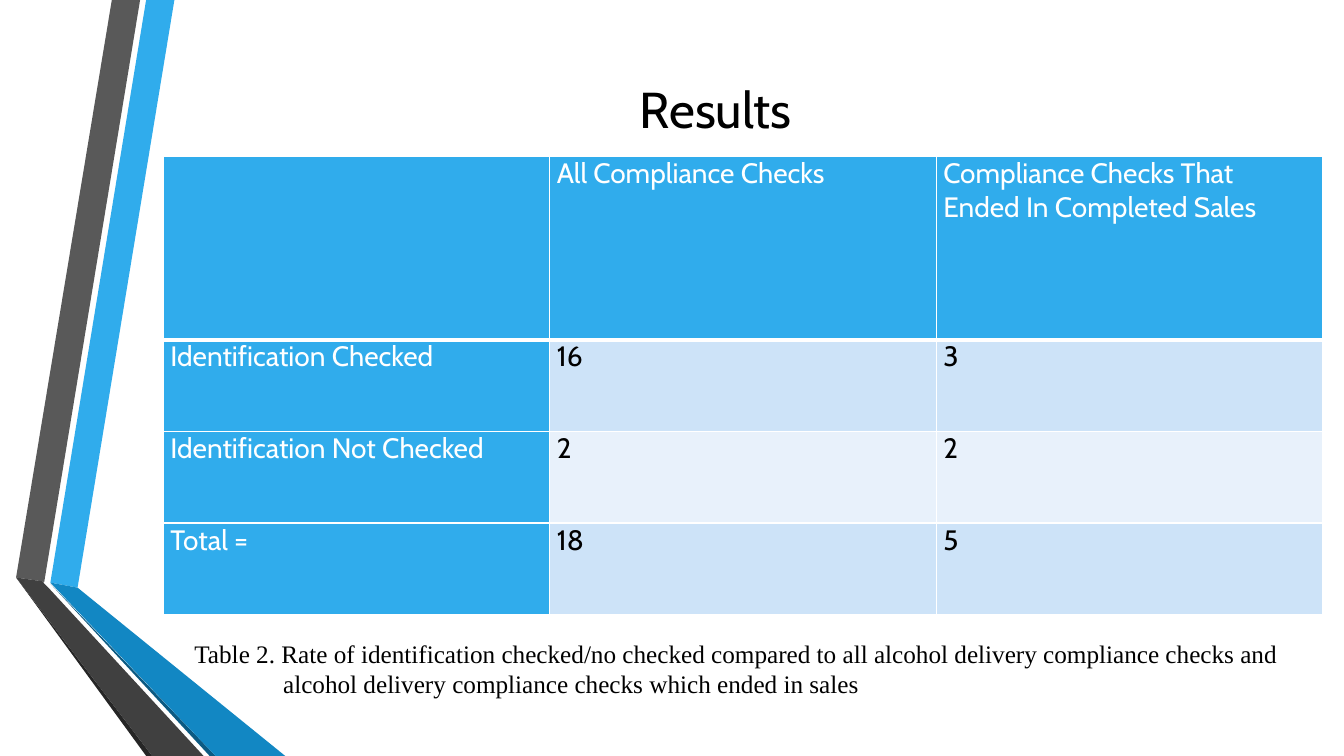
from lxml import etree
from pptx import Presentation, util as u
from pptx.dml.color import RGBColor
from pptx.enum import text
from pptx.oxml import ns

PX = 9144  # one hundredth of an inch
BLUE, WHITE, BLACK = "30ACEC", "FFFFFF", "000000"
BANDS = ["CDE3F8", "E8F1FB"]

RIBBONS = [  # colour, outline relative to the ribbon box
    (BLUE, [(34, 578), (61, 583), (157, 0), (129, 0)]),
    ("595959", [(123, 0), (95, 0), (0, 573), (28, 577)]),
    ("262626", [(0, 573), (129, 750), (135, 750)]),
    ("0C5A82", [(34, 579), (192, 750), (198, 750)]),
    ("1287C3", [(34, 578), (198, 750), (267, 750), (61, 583)]),
    ("404040", [(186, 750), (32, 583), (27, 578), (28, 577), (0, 573), (135, 750)]),
]
ROWS = [
    ["", "All Compliance Checks", "Compliance Checks That Ended In Completed Sales"],
    ["Identification Checked", "16", "3"],
    ["Identification Not Checked", "2", "2"],
    ["Total =", "18", "5"],
]
CAPTION = [
    "Table 2. Rate of identification checked/no checked compared to all alcohol delivery compliance checks and",
    "alcohol delivery compliance checks which ended in sales",
]


def px(*lengths):
    return [u.Emu(length * PX) for length in lengths]


def paint(fill, colour):
    fill.solid()
    fill.fore_color.rgb = RGBColor.from_string(colour)


def write(para, words, size=20, font="Cabin", colour=BLACK, align=text.PP_ALIGN.LEFT, indent=0):
    para.alignment = align
    if indent:
        properties = para._p.get_or_add_pPr()
        properties.set("marL", str(indent * PX))
        properties.set("indent", "0")
    span = para.add_run()
    span.text = words
    span.font.size = u.Pt(size)
    span.font.name = font
    span.font.color.rgb = RGBColor.from_string(colour)


def add_ribbons(page, left, top):
    for colour, points in RIBBONS:
        builder = page.shapes.build_freeform(*points[0], scale=PX)
        builder.add_line_segments(points[1:], close=True)
        ribbon = builder.convert_to_shape(*px(left, top))
        ribbon.shadow.inherit = False
        paint(ribbon.fill, colour)
        ribbon.line.fill.background()


def add_title(page, *box):
    frame = page.shapes.add_textbox(*px(*box)).text_frame
    frame.word_wrap = True
    frame.vertical_anchor = text.MSO_ANCHOR.MIDDLE
    write(frame.paragraphs[0], "Results", size=36, align=text.PP_ALIGN.CENTER)


def add_borders(cell, bottom):
    properties = cell._tc.get_or_add_tcPr()
    widths = {"lnL": 1, "lnR": 1, "lnT": 1, "lnB": bottom}
    for place, (side, width) in enumerate(widths.items()):
        border = etree.Element(ns.qn("a:" + side), w=str(u.Pt(width)))
        solid = etree.SubElement(border, ns.qn("a:solidFill"))
        etree.SubElement(solid, ns.qn("a:srgbClr"), val=WHITE)
        properties.insert(place, border)  # borders come before the fill


def add_results(page, left, top, width, height):
    frame = page.shapes.add_table(len(ROWS), len(ROWS[0]), *px(left, top, width, height))
    table = frame.table
    # The header row is twice as high as the others
    unit = height * PX // (len(ROWS) + 1)
    for r, row in enumerate(ROWS):
        table.rows[r].height = unit * (2 if r == 0 else 1)
        for c, words in enumerate(row):
            heading = r == 0 or c == 0
            cell = table.cell(r, c)
            cell.margin_left, cell.margin_right, cell.margin_top, cell.margin_bottom = px(7, 7, 0, 0)
            paint(cell.fill, BLUE if heading else BANDS[(r - 1) % 2])
            add_borders(cell, bottom=3 if r == 0 else 1)
            if words:
                write(cell.text_frame.paragraphs[0], words, colour=WHITE if heading else BLACK)


def add_caption(page, *box):
    frame = page.shapes.add_textbox(*px(*box)).text_frame
    frame.word_wrap = True
    for number, words in enumerate(CAPTION):
        para = frame.add_paragraph() if number else frame.paragraphs[0]
        write(para, words, size=18, font="Times New Roman", indent=88 * number)


def main():
    deck = Presentation()
    deck.slide_width, deck.slide_height = px(1333, 750)
    page = deck.slides.add_slide(deck.slide_layouts[6])
    paint(page.background.fill, WHITE)
    add_ribbons(page, 16, 0)
    add_title(page, 162, 75, 1096, 65)
    add_results(page, 162, 155, 1150, 455)
    add_caption(page, 183, 628, 1150, 71)
    deck.save("out.pptx")


if __name__ == "__main__":
    main()
